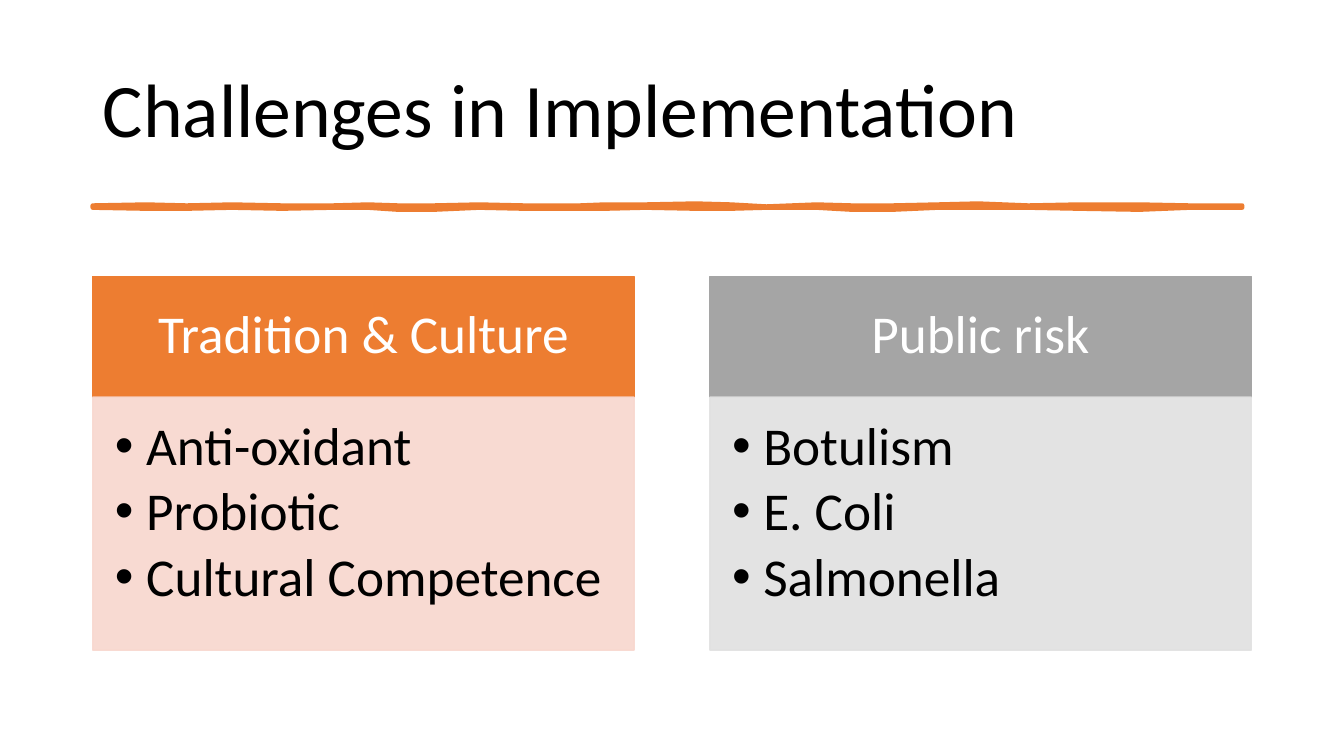
from lxml.etree import SubElement
from pptx import Presentation
from pptx.dml.color import RGBColor
from pptx.enum.text import MSO_ANCHOR as Anchor, MSO_AUTO_SIZE as AutoSize, PP_ALIGN as Align
from pptx.oxml.ns import qn
from pptx.util import Inches, Pt

COLORS = {
    "black": "000000", "white": "FFFFFF",
    "orange": "ED7D31", "pale orange": "F8D7CE",
    "gray": "A5A5A5", "pale gray": "E1E1E1",
}


def write_text(shape, lines, size=38, color="black", align=Align.LEFT, anchor=Anchor.TOP,
               insets=(0.1, 0.05, 0.1, 0.05), space_after=0, bullet_indent=0):
    frame = shape.text_frame
    frame.word_wrap = True
    frame.auto_size = AutoSize.NONE
    frame.vertical_anchor = anchor
    (frame.margin_left, frame.margin_top,
     frame.margin_right, frame.margin_bottom) = map(Inches, insets)
    for index, line in enumerate(lines):
        paragraph = frame.add_paragraph() if index else frame.paragraphs[0]
        paragraph.alignment = align
        paragraph.line_spacing = 0.9
        paragraph.space_before = Pt(0)
        paragraph.space_after = Pt(space_after)
        if bullet_indent:
            properties = paragraph._p.get_or_add_pPr()
            properties.set("marL", str(Inches(bullet_indent)))
            properties.set("indent", str(-Inches(bullet_indent)))
            SubElement(properties, qn("a:buFont"), typeface="Arial")
            SubElement(properties, qn("a:buChar"), char="•")
        run = paragraph.add_run()
        run.text = line
        run.font.name = "Calibri"
        run.font.size = Pt(size)
        run.font.bold = False
        run.font.color.rgb = RGBColor.from_string(COLORS[color])


def paint(shape, color, line_width=1, opacity=100):
    """Give fill and outline one colour and opacity (percent)."""
    for fill in (shape.fill, shape.line.fill):
        fill.solid()
        fill.fore_color.rgb = RGBColor.from_string(COLORS[color])
    shape.line.width = Pt(line_width)
    if opacity < 100:
        for color_element in shape._element.spPr.iter(qn("a:srgbClr")):
            SubElement(color_element, qn("a:alpha"), val=str(opacity * 1000))


presentation = Presentation()
presentation.slide_width = Inches(13.33)
presentation.slide_height = Inches(7.5)
comparison_layout = presentation.slide_layouts[4]
slide = presentation.slides.add_slide(comparison_layout)

LEFT = 0.92
title = slide.shapes.title
title.left, title.top, title.width, title.height = map(Inches, (LEFT, 0.4, 11.5, 1.45))
write_text(title, ["Challenges in Implementation"], size=54, anchor=Anchor.MIDDLE)

# Hand-drawn rule: x, upper edge, lower edge
BRUSH_EDGES = [
    (0.92, 2.04, 2.06), (1.45, 2.03, 2.07), (1.85, 2.04, 2.07), (2.3, 2.03, 2.06),
    (2.8, 2.04, 2.07), (3.3, 2.04, 2.06), (3.65, 2.03, 2.06), (3.95, 2.04, 2.08),
    (4.3, 2.04, 2.08), (4.75, 2.03, 2.06), (5.2, 2.04, 2.07), (5.75, 2.04, 2.07),
    (6.0, 2.03, 2.07), (6.4, 2.03, 2.06), (6.9, 2.02, 2.07), (7.25, 2.03, 2.07),
    (7.6, 2.05, 2.06), (8.1, 2.03, 2.06), (8.45, 2.04, 2.08), (8.85, 2.04, 2.08),
    (9.3, 2.03, 2.06), (9.7, 2.02, 2.06), (10.2, 2.04, 2.06), (10.7, 2.03, 2.07),
    (11.3, 2.03, 2.08), (11.8, 2.04, 2.06), (12.32, 2.04, 2.06),
]
upper_edge = [(Inches(x), Inches(top)) for x, top, bottom in BRUSH_EDGES]
lower_edge = [(Inches(x), Inches(bottom)) for x, top, bottom in reversed(BRUSH_EDGES)]
builder = slide.shapes.build_freeform(*upper_edge[0])
builder.add_line_segments(upper_edge[1:] + lower_edge, close=True)
rule = builder.convert_to_shape()
rule.shadow.inherit = False
paint(rule, "orange", line_width=3.25)

COLUMN_WIDTH, COLUMN_STEP = 5.37, 6.12
HEADING_TOP, HEADING_HEIGHT, LIST_HEIGHT = 2.74, 1.2, 2.51
COLUMNS = [
    ("Tradition & Culture", "orange", ["Anti-oxidant", "Probiotic", "Cultural Competence"]),
    ("Public risk", "gray", ["Botulism", "E. Coli", "Salmonella"]),
]
bodies = [shape for shape in slide.placeholders if shape.placeholder_format.idx in (1, 2, 3, 4)]
for column, (heading_text, color, items) in enumerate(COLUMNS):
    heading, item_list = bodies[2 * column:2 * column + 2]
    for shape, top, height in ((heading, HEADING_TOP, HEADING_HEIGHT),
                               (item_list, HEADING_TOP + HEADING_HEIGHT, LIST_HEIGHT)):
        shape.left, shape.top = Inches(LEFT + column * COLUMN_STEP), Inches(top)
        shape.width, shape.height = Inches(COLUMN_WIDTH), Inches(height)
    paint(heading, color)
    paint(item_list, f"pale {color}", opacity=90)
    write_text(heading, [heading_text], color="white", align=Align.CENTER,
               anchor=Anchor.MIDDLE, insets=(0.3, 0.17, 0.3, 0.17))
    write_text(item_list, items, insets=(0.22, 0.22, 0.3, 0.33),
               space_after=5.7, bullet_indent=0.31)

presentation.save("out.pptx")
